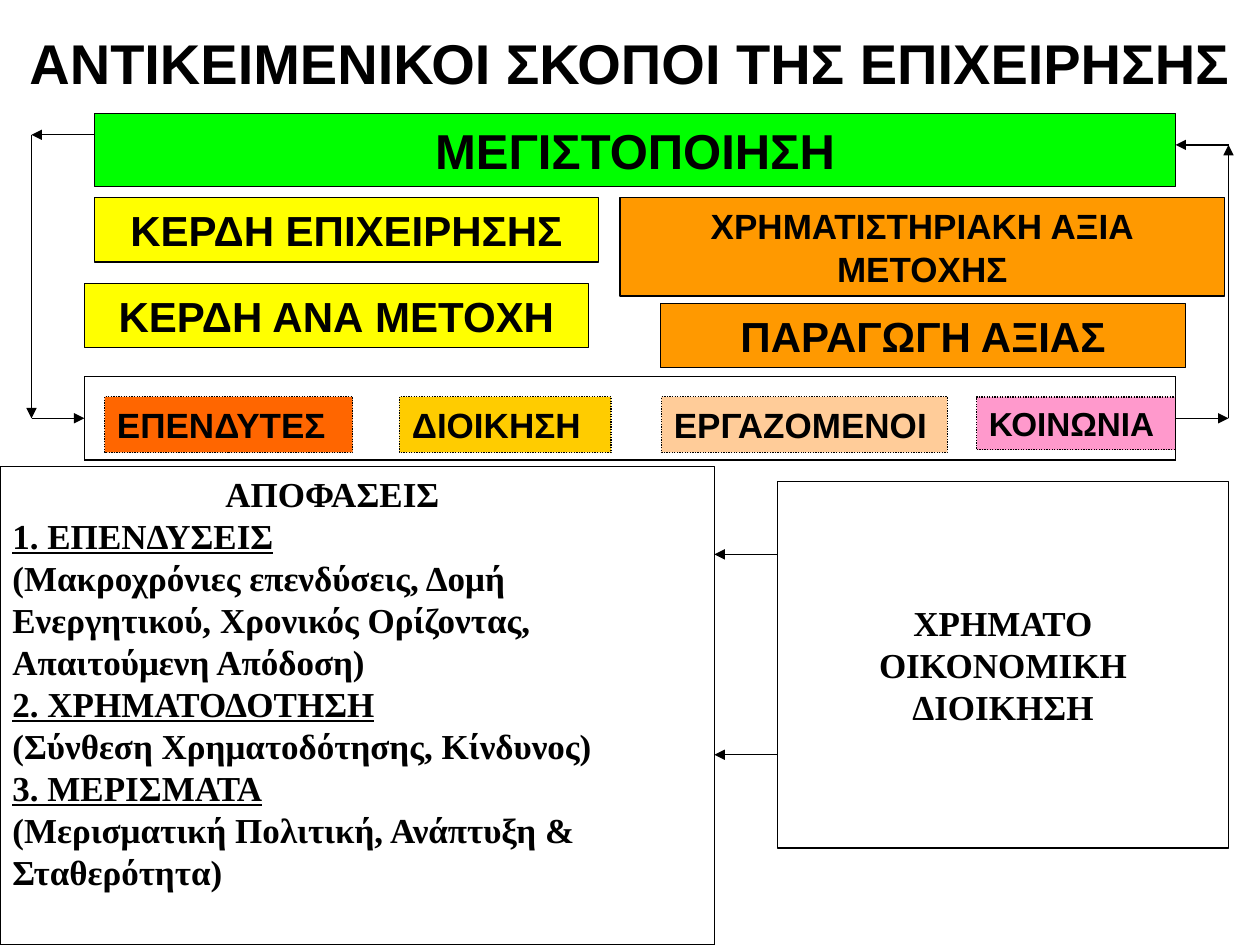
from dataclasses import dataclass

from lxml import etree
from pptx import Presentation
from pptx.dml.color import RGBColor
from pptx.enum.dml import MSO_LINE
from pptx.enum.shapes import MSO_CONNECTOR, MSO_SHAPE
from pptx.enum.text import MSO_ANCHOR, PP_ALIGN
from pptx.oxml.ns import qn
from pptx.util import Inches, Pt

RECTANGLE = MSO_SHAPE.RECTANGLE
STRAIGHT = MSO_CONNECTOR.STRAIGHT
DOTTED = MSO_LINE.ROUND_DOT
TOP, MIDDLE = MSO_ANCHOR.TOP, MSO_ANCHOR.MIDDLE
LEFT, CENTER = PP_ALIGN.LEFT, PP_ALIGN.CENTER


@dataclass(frozen=True)
class Theme:
    sans: str = "Arial"
    serif: str = "Times New Roman"
    ink: str = "000000"
    green: str = "00FF00"
    yellow: str = "FFFF00"
    orange: str = "FF9900"
    red: str = "FF6600"
    gold: str = "FFCC00"
    peach: str = "FFCC99"
    pink: str = "FF99CC"
    title: int = 32
    goal: int = 28
    measure: int = 24
    body: int = 20
    small: int = 19
    rule: float = 0.75


THEME = Theme()


@dataclass(frozen=True)
class Box:
    """A rectangle in inches."""
    left: float
    top: float
    width: float
    height: float

    @property
    def right(self):
        return self.left + self.width

    @property
    def bottom(self):
        return self.top + self.height

    def inside(self, dx, dy, width, height):
        return Box(self.left + dx, self.top + dy, width, height)

    def emu(self):
        return [Inches(v) for v in (self.left, self.top, self.width, self.height)]


def color(value):
    return RGBColor.from_string(value)


def write(frame, lines, size, font=THEME.sans, align=CENTER, anchor=MIDDLE):
    """Fill a text frame with bold paragraphs, given as (text, underlined)."""
    frame.word_wrap = True
    frame.vertical_anchor = anchor
    for i, (text, underlined) in enumerate(lines):
        paragraph = frame.paragraphs[0] if i == 0 else frame.add_paragraph()
        paragraph.alignment = align
        run = paragraph.add_run()
        run.text = text
        run.font.name, run.font.size, run.font.bold = font, Pt(size), True
        run.font.underline = underlined
        run.font.color.rgb = color(THEME.ink)


def add_panel(slide, box, lines, size, fill=None, dash=None, **style):
    panel = slide.shapes.add_shape(RECTANGLE, *box.emu())
    panel.shadow.inherit = False
    if fill:
        panel.fill.solid()
        panel.fill.fore_color.rgb = color(fill)
    else:
        panel.fill.background()
    panel.line.color.rgb = color(THEME.ink)
    panel.line.width = Pt(THEME.rule)
    if dash:
        panel.line.dash_style = dash
    write(panel.text_frame, lines, size, **style)
    return panel


def add_line(slide, start, end, arrow=True):
    line = slide.shapes.add_connector(STRAIGHT, *[Inches(v) for v in (*start, *end)])
    line.line.color.rgb = color(THEME.ink)
    line.line.width = Pt(THEME.rule)
    if arrow:
        etree.SubElement(line.line._get_or_add_ln(), qn("a:tailEnd"), type="triangle")
    etree.SubElement(line._element.spPr, qn("a:effectLst"))


def add_route(slide, points, arrow=True):
    for start, end in zip(points, points[1:]):
        add_line(slide, start, end, arrow)


def add_title(slide, box):
    title = slide.shapes.add_textbox(*box.emu())
    write(title.text_frame, [("ΑΝΤΙΚΕΙΜΕΝΙΚΟΙ ΣΚΟΠΟΙ ΤΗΣ ΕΠΙΧΕΙΡΗΣΗΣ", False)], THEME.title)


def add_goals(slide, box):
    """The goal banner and the four measures below it."""
    goals = [
        ("ΜΕΓΙΣΤΟΠΟΙΗΣΗ", (0.08, 0, 8.58, 0.58), THEME.goal, THEME.green),
        ("ΚΕΡΔΗ ΕΠΙΧΕΙΡΗΣΗΣ", (0.08, 0.67, 4, 0.51), THEME.measure, THEME.yellow),
        ("ΚΕΡΔΗ ΑΝΑ ΜΕΤΟΧΗ", (0, 1.35, 4, 0.51), THEME.measure, THEME.yellow),
        ("ΧΡΗΜΑΤΙΣΤΗΡΙΑΚΗ ΑΞΙΑ ΜΕΤΟΧΗΣ", (4.25, 0.67, 4.8, 0.78), THEME.body, THEME.orange),
        ("ΠΑΡΑΓΩΓΗ ΑΞΙΑΣ", (4.57, 1.51, 4.17, 0.51), THEME.measure, THEME.orange),
    ]
    for text, place, size, fill in goals:
        add_panel(slide, box.inside(*place), [(text, False)], size, fill)


def add_stakeholders(slide, box):
    """Four dotted labels in a frame of lines."""
    groups = [
        ("ΕΠΕΝΔΥΤΕΣ", 0.16, 1.97, 0.44, THEME.body, THEME.red),
        ("ΔΙΟΙΚΗΣΗ", 2.5, 1.68, 0.44, THEME.body, THEME.gold),
        ("ΕΡΓΑΖΟΜΕΝΟΙ", 4.58, 2.27, 0.44, THEME.body, THEME.peach),
        ("ΚΟΙΝΩΝΙΑ", 7.08, 1.58, 0.42, THEME.small, THEME.pink),
    ]
    for text, dx, width, height, size, fill in groups:
        add_panel(slide, box.inside(dx, 0.16, width, height), [(text, False)],
                  size, fill, DOTTED, align=LEFT)
    corners = [(box.left, box.top), (box.right, box.top),
               (box.right, box.bottom), (box.left, box.bottom)]
    add_route(slide, corners + corners[:1], arrow=False)


def add_decisions(slide, box):
    lines = [
        ("ΑΠΟΦΑΣΕΙΣ", False),
        ("1. ΕΠΕΝΔΥΣΕΙΣ", True),
        ("(Μακροχρόνιες επενδύσεις, Δομή Ενεργητικού, Χρονικός Ορίζοντας, "
         "Απαιτούμενη Απόδοση)", False),
        ("2. ΧΡΗΜΑΤΟΔΟΤΗΣΗ", True),
        ("(Σύνθεση Χρηματοδότησης, Κίνδυνος)", False),
        ("3. ΜΕΡΙΣΜΑΤΑ", True),
        ("(Μερισματική Πολιτική, Ανάπτυξη & Σταθερότητα)", False),
    ]
    panel = add_panel(slide, box, lines, THEME.body, font=THEME.serif,
                      align=LEFT, anchor=TOP)
    # The heading is indented from the left edge
    heading = panel.text_frame.paragraphs[0]
    heading._p.get_or_add_pPr().set("marL", str(Inches(1.69)))


def add_finance(slide, box, decisions):
    """The finance panel and its two arrows to the decisions."""
    lines = [(word, False) for word in ("ΧΡΗΜΑΤΟ", "ΟΙΚΟΝΟΜΙΚΗ", "ΔΙΟΙΚΗΣΗ")]
    add_panel(slide, box, lines, THEME.body, font=THEME.serif)
    for dy in (0.58, 2.17):
        y = box.top + dy
        add_line(slide, (box.left, y), (decisions.right, y))


def add_feedback(slide, goals, stakeholders):
    """Arrow routes between the goal banner and the stakeholders."""
    middle = stakeholders.top + stakeholders.height / 2
    outer_left, outer_right = 0.25, 9.75
    left_y, right_y = goals.top + 0.17, goals.top + 0.25
    add_route(slide, [(goals.left + 0.08, left_y), (outer_left, left_y),
                      (outer_left, middle), (stakeholders.left, middle)])
    add_route(slide, [(stakeholders.right, middle), (outer_right, middle),
                      (outer_right, right_y), (stakeholders.right, right_y)])


def main():
    deck = Presentation()
    deck.slide_width, deck.slide_height = Inches(10), Inches(7.5)
    slide = deck.slides.add_slide(deck.slide_layouts[6])

    goals = Box(0.67, 0.9, 9.05, 2.02)
    stakeholders = Box(0.67, 2.99, 8.66, 0.66)
    decisions = Box(0, 3.7, 5.67, 3.8)

    add_title(slide, Box(0, 0.17, 10, 0.64))
    add_goals(slide, goals)
    add_stakeholders(slide, stakeholders)
    add_decisions(slide, decisions)
    add_finance(slide, Box(6.17, 3.82, 3.58, 2.91), decisions)
    add_feedback(slide, goals, stakeholders)
    deck.save("out.pptx")


if __name__ == "__main__":
    main()
